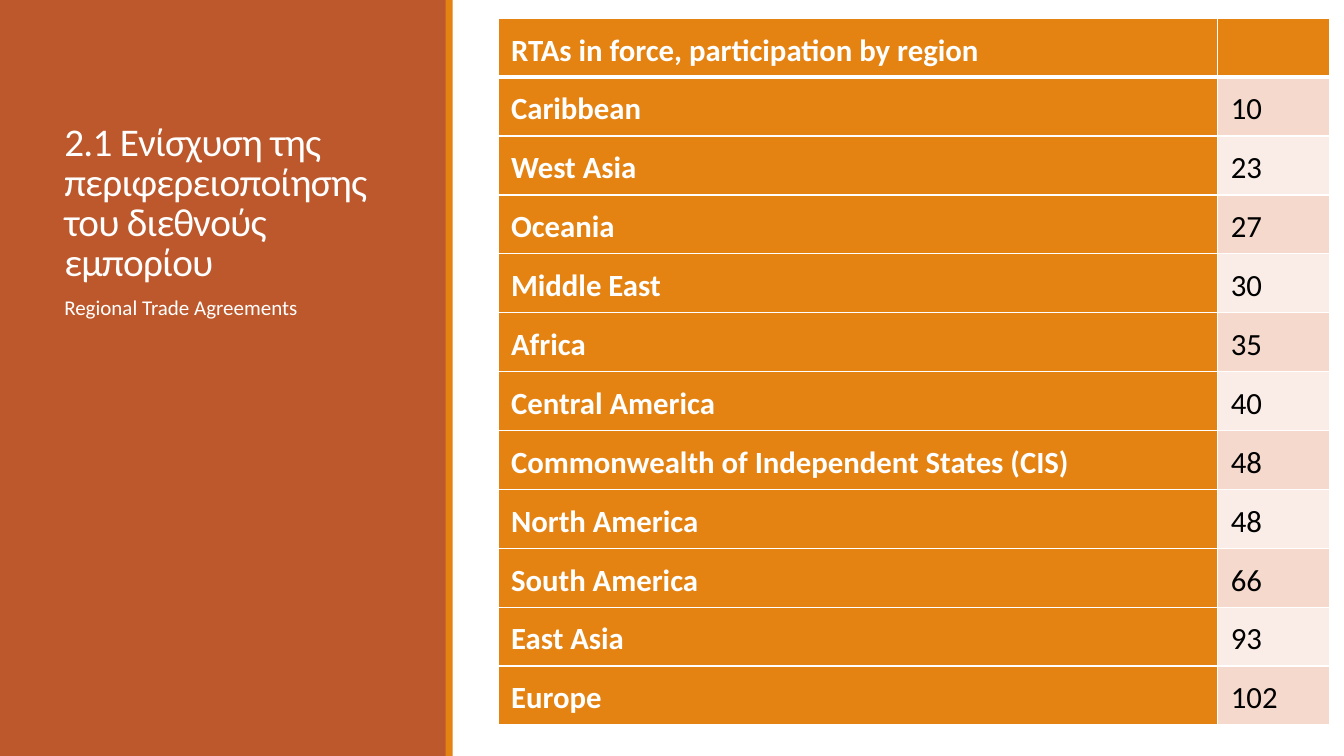
"""Build a slide with a title panel and a table of trade agreements by region."""
from typing import NamedTuple

from lxml import etree
from pptx import Presentation
from pptx.dml.color import RGBColor
from pptx.enum.shapes import MSO_SHAPE
from pptx.enum.text import MSO_ANCHOR, MSO_AUTO_SIZE, PP_ALIGN
from pptx.oxml.ns import qn
from pptx.util import Cm, Pt

RECTANGLE = MSO_SHAPE.RECTANGLE
TOP, MIDDLE, BOTTOM = MSO_ANCHOR.TOP, MSO_ANCHOR.MIDDLE, MSO_ANCHOR.BOTTOM
LEFT = PP_ALIGN.LEFT
NO_AUTOFIT = MSO_AUTO_SIZE.NONE

RUST = RGBColor(0xBD, 0x58, 0x2C)
ORANGE = RGBColor(0xE4, 0x83, 0x12)
DARK_BAND = RGBColor(0xF5, 0xD9, 0xCC)
LIGHT_BAND = RGBColor(0xFA, 0xED, 0xE7)
WHITE = RGBColor(0xFF, 0xFF, 0xFF)
BLACK = RGBColor(0x00, 0x00, 0x00)

FONT = "Calibri"
SLIDE_WIDTH, SLIDE_HEIGHT = Cm(33.87), Cm(19.05)
TABLE_HEIGHT = Cm(17.81)
COLUMN_WIDTHS = (Cm(18.14), Cm(2.82))


class Panel(NamedTuple):
    left: float
    width: float
    color: RGBColor


class Region(NamedTuple):
    name: str
    agreements: int


PANELS = (Panel(0, 11.25, RUST), Panel(11.23, 0.18, ORANGE))
HEADING = "RTAs in force, participation by region"
REGIONS = (
    Region("Caribbean", 10),
    Region("West Asia", 23),
    Region("Oceania", 27),
    Region("Middle East", 30),
    Region("Africa", 35),
    Region("Central America", 40),
    Region("Commonwealth of Independent States (CIS)", 48),
    Region("North America", 48),
    Region("South America", 66),
    Region("East Asia", 93),
    Region("Europe", 102),
)


def write_text(frame, text: str, *, size: float, color: RGBColor, spacing: float,
               bold: bool = False, after: float = 0, tracking: int = 0,
               indent: float = 0) -> None:
    paragraph = frame.paragraphs[0]
    properties = paragraph._p.get_or_add_pPr()
    properties.set("marL", str(Cm(indent)))
    properties.set("indent", "0")
    etree.SubElement(properties, qn("a:buNone"))
    paragraph.alignment = LEFT
    paragraph.line_spacing = spacing
    paragraph.space_before = Pt(0)
    paragraph.space_after = Pt(after)
    run = paragraph.add_run()
    run.text = text
    run.font.name = FONT
    run.font.size = Pt(size)
    run.font.bold = bold
    run.font.color.rgb = color
    if tracking:
        run.font._element.set("spc", str(tracking))


def place_text(shape, top: float, height: float, anchor: MSO_ANCHOR, inset: float):
    shape.left, shape.top = Cm(1.37), Cm(top)
    shape.width, shape.height = Cm(8.56), Cm(height)
    frame = shape.text_frame
    frame.word_wrap = True
    frame.auto_size = NO_AUTOFIT
    frame.vertical_anchor = anchor
    frame.margin_left = frame.margin_right = Cm(inset)
    frame.margin_top = frame.margin_bottom = Cm(0.13)
    return frame


def add_panel(slide, panel: Panel, layer: int) -> None:
    shape = slide.shapes.add_shape(RECTANGLE, Cm(panel.left), 0,
                                   Cm(panel.width), SLIDE_HEIGHT)
    shape.shadow.inherit = False
    shape.fill.solid()
    shape.fill.fore_color.rgb = panel.color
    shape.line.fill.background()
    slide.shapes._spTree.insert(2 + layer, shape._element)


def format_cell(cell, fill: RGBColor, top: float, bottom: float) -> None:
    properties = cell._tc.get_or_add_tcPr()
    for side, width in (("L", 1), ("R", 1), ("T", top), ("B", bottom)):
        line = etree.SubElement(properties, qn(f"a:ln{side}"), w=str(Pt(width)))
        solid = etree.SubElement(line, qn("a:solidFill"))
        etree.SubElement(solid, qn("a:srgbClr"), val=str(WHITE))
    cell.fill.solid()
    cell.fill.fore_color.rgb = fill
    cell.vertical_anchor = MIDDLE
    cell.margin_left = cell.margin_right = Cm(0.33)
    cell.margin_top = cell.margin_bottom = 0


def add_region_table(slide) -> None:
    rows = [(HEADING, "")] + [(region.name, str(region.agreements)) for region in REGIONS]
    frame = slide.shapes.add_table(len(rows), len(COLUMN_WIDTHS), Cm(12.55), Cm(0.46),
                                   sum(COLUMN_WIDTHS), TABLE_HEIGHT)
    table = frame.table
    for column, width in zip(table.columns, COLUMN_WIDTHS):
        column.width = width
    for row_index, row in enumerate(rows):
        table.rows[row_index].height = TABLE_HEIGHT // len(rows)
        band = DARK_BAND if row_index % 2 else LIGHT_BAND
        for column_index, text in enumerate(row):
            cell = table.cell(row_index, column_index)
            label = row_index == 0 or column_index == 0
            format_cell(cell, ORANGE if label else band,
                        top=3 if row_index == 1 else 1,
                        bottom=3 if row_index == 0 else 1)
            if text:
                write_text(cell.text_frame, text, size=22, bold=label, spacing=1.15,
                           color=WHITE if label else BLACK)


def main() -> None:
    presentation = Presentation()
    presentation.slide_width, presentation.slide_height = SLIDE_WIDTH, SLIDE_HEIGHT
    slide = presentation.slides.add_slide(presentation.slide_layouts[1])
    for layer, panel in enumerate(PANELS):
        add_panel(slide, panel, layer)
    title = place_text(slide.shapes.title, 1.45, 5.84, BOTTOM, 0.25)
    write_text(title, "2.1 Ενίσχυση της περιφερειοποίησης του διεθνούς εμπορίου",
               size=28, color=WHITE, spacing=0.85, tracking=-50)
    body = place_text(slide.placeholders[1], 7.37, 9.27, TOP, 0)
    write_text(body, "Regional Trade Agreements", size=15, color=WHITE,
               spacing=0.9, after=2, indent=0.25)
    add_region_table(slide)
    presentation.save("out.pptx")


if __name__ == "__main__":
    main()
